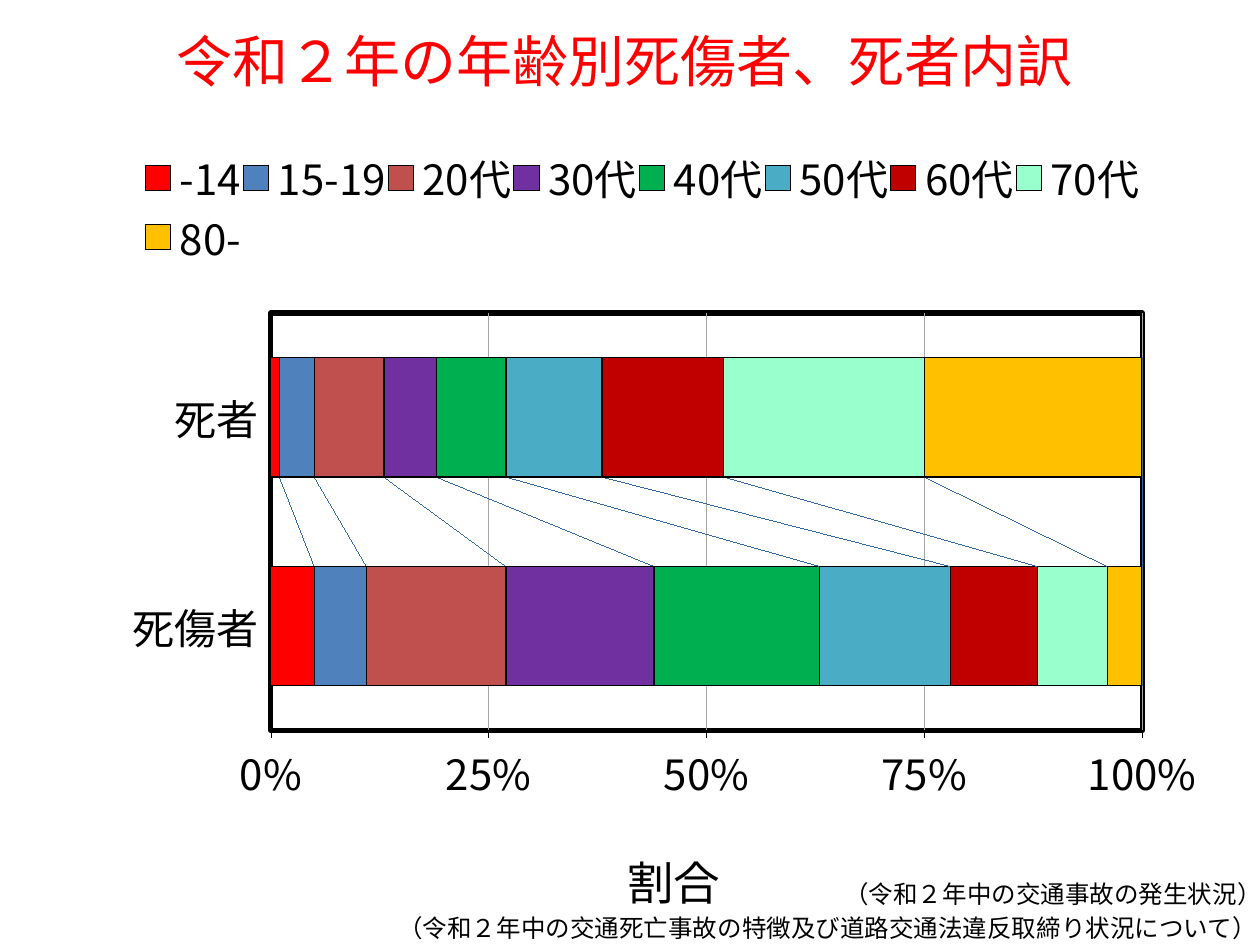
import lxml.etree
import pptx
import pptx.chart.data
import pptx.dml.color
import pptx.enum.chart
import pptx.enum.text
import pptx.oxml
import pptx.oxml.ns
import pptx.util

FONT = "Noto Sans CJK JP"
SCALE = 914400 / 126
AGE_GROUPS = [
    ("-14", (5, 1), "FF0000"),
    ("15-19", (6, 4), "4F81BD"),
    ("20代", (16, 8), "C0504D"),
    ("30代", (17, 6), "7030A0"),
    ("40代", (19, 8), "00B050"),
    ("50代", (15, 11), "4BACC6"),
    ("60代", (10, 14), "C00000"),
    ("70代", (8, 23), "99FFCC"),
    ("80-", (4, 25), "FFC000"),
]


def px(length):
    return pptx.util.Emu(round(length * SCALE))


def rgb(color):
    return pptx.dml.color.RGBColor.from_string(color)


def format_font(font, size, color="000000"):
    font.name = FONT
    font.size = pptx.util.Pt(size)
    font.bold = False
    font.color.rgb = rgb(color)


def format_line(line, color, width):
    line.color.rgb = rgb(color)
    line.width = pptx.util.Pt(width)


def write_text(frame, text, size, color="000000", align=None):
    paragraph = frame.paragraphs[0]
    paragraph.alignment = align
    run = paragraph.add_run()
    run.text = text
    format_font(run.font, size, color)
    return run


def add_east_asian_fonts(element):
    for latin in list(element.iter(pptx.oxml.ns.qn("a:latin"))):
        east_asian = lxml.etree.Element(pptx.oxml.ns.qn("a:ea"), typeface=FONT)
        latin.addnext(east_asian)


def chart_xml(body):
    return pptx.oxml.parse_xml(
        body.replace(">", f' {pptx.oxml.ns.nsdecls("c", "a")}>', 1))


def outline_xml(tag, color, width):
    return (f'<c:{tag}><a:ln w="{pptx.util.Pt(width)}"><a:solidFill>'
            f'<a:srgbClr val="{color}"/></a:solidFill></a:ln></c:{tag}>')


def set_layout(parent, previous, target=None, **values):
    for layout in parent.findall(pptx.oxml.ns.qn("c:layout")):
        parent.remove(layout)
    settings = f'<c:layoutTarget val="{target}"/>' if target else ""
    settings += '<c:xMode val="edge"/><c:yMode val="edge"/>'
    settings += "".join(f'<c:{key} val="{value}"/>' for key, value in values.items())
    layout = chart_xml(f"<c:layout><c:manualLayout>{settings}</c:manualLayout></c:layout>")
    if previous is None:
        parent.insert(0, layout)
    else:
        previous.addnext(layout)


class SlideBuilder:
    def __init__(self, presentation):
        self.slide = presentation.slides.add_slide(presentation.slide_layouts[5])

    def title(self, text, left, top, width, height):
        shape = self.slide.shapes.title
        shape.left, shape.top, shape.width, shape.height = map(
            px, (left, top, width, height))
        shape.text_frame.vertical_anchor = pptx.enum.text.MSO_ANCHOR.MIDDLE
        write_text(shape.text_frame, text, 32, "FF0000", pptx.enum.text.PP_ALIGN.CENTER)
        add_east_asian_fonts(shape.element)

    def note(self, text, left, top, width, height):
        shape = self.slide.shapes.add_textbox(*map(px, (left, top, width, height)))
        shape.text_frame.word_wrap = True
        write_text(shape.text_frame, text, 14)
        add_east_asian_fonts(shape.element)

    def age_chart(self, left, top, width, height):
        data = pptx.chart.data.CategoryChartData(number_format="General")
        data.categories = ["死傷者", "死者"]
        for name, values, color in AGE_GROUPS:
            data.add_series(name, values)
        chart = self.slide.shapes.add_chart(
            pptx.enum.chart.XL_CHART_TYPE.BAR_STACKED_100,
            *map(px, (left, top, width, height)), data).chart
        chart.has_title = False
        format_font(chart.font, 26.6)
        self.bars(chart.plots[0])
        self.axes(chart)
        self.legend(chart)
        plot_area = chart.element.find(f".//{pptx.oxml.ns.qn('c:plotArea')}")
        set_layout(plot_area, None, "inner", x=0.19, y=0.23, w=0.75, h=0.53)
        plot_area.append(chart_xml(outline_xml("spPr", "000000", 3)))
        overlap = plot_area.find(f".//{pptx.oxml.ns.qn('c:overlap')}")
        overlap.addnext(chart_xml(
            f"<c:serLines>{outline_xml('spPr', '4A7EBB', 0.25)}</c:serLines>"))
        add_east_asian_fonts(chart.element)

    def bars(self, plot):
        plot.gap_width = 75
        plot.overlap = 100
        plot.vary_by_categories = False
        for series, (name, values, color) in zip(plot.series, AGE_GROUPS):
            series.format.fill.solid()
            series.format.fill.fore_color.rgb = rgb(color)
            format_line(series.format.line, "000000", 0.75)

    def axes(self, chart):
        tick = pptx.enum.chart.XL_TICK_MARK
        for axis, mark in ((chart.category_axis, tick.NONE), (chart.value_axis, tick.OUTSIDE)):
            axis.major_tick_mark = mark
            axis.minor_tick_mark = tick.NONE
            format_font(axis.tick_labels.font, 24)
            format_line(axis.format.line, "000000", 0.25)
        chart.category_axis.tick_label_position = pptx.enum.chart.XL_TICK_LABEL_POSITION.LOW
        chart.category_axis.has_major_gridlines = False
        axis = chart.value_axis
        axis.minimum_scale, axis.maximum_scale, axis.major_unit = 0, 1, 0.25
        axis.tick_labels.number_format = "0%"
        axis.tick_labels.number_format_is_linked = False
        axis.has_major_gridlines = True
        format_line(axis.major_gridlines.format.line, "A6A6A6", 0.25)
        write_text(axis.axis_title.text_frame, "割合", 26.6)
        title = chart.element.find(
            f".//{pptx.oxml.ns.qn('c:valAx')}/{pptx.oxml.ns.qn('c:title')}")
        set_layout(title, title.find(pptx.oxml.ns.qn("c:tx")), x=0.49, y=0.89)

    def legend(self, chart):
        chart.has_legend = True
        chart.legend.position = pptx.enum.chart.XL_LEGEND_POSITION.TOP
        chart.legend.include_in_layout = False
        format_font(chart.legend.font, 24)
        legend = chart.element.find(f".//{pptx.oxml.ns.qn('c:legend')}")
        set_layout(legend, legend.find(pptx.oxml.ns.qn("c:legendPos")),
                   x=0.08, y=0.02, w=0.86, h=0.15)


def main():
    presentation = pptx.Presentation()
    presentation.slide_width, presentation.slide_height = px(1260), px(945)
    builder = SlideBuilder(presentation)
    builder.title("令和２年の年齢別死傷者、死者内訳", 0, 9, 1250, 102)
    builder.age_chart(50, 132, 1162, 795)
    builder.note("（令和２年中の交通事故の発生状況）", 832, 873, 467, 43)
    builder.note("（令和２年中の交通死亡事故の特徴及び道路交通法違反取締り状況について）",
                 386, 907, 924, 43)
    presentation.save("out.pptx")


if __name__ == "__main__":
    main()
